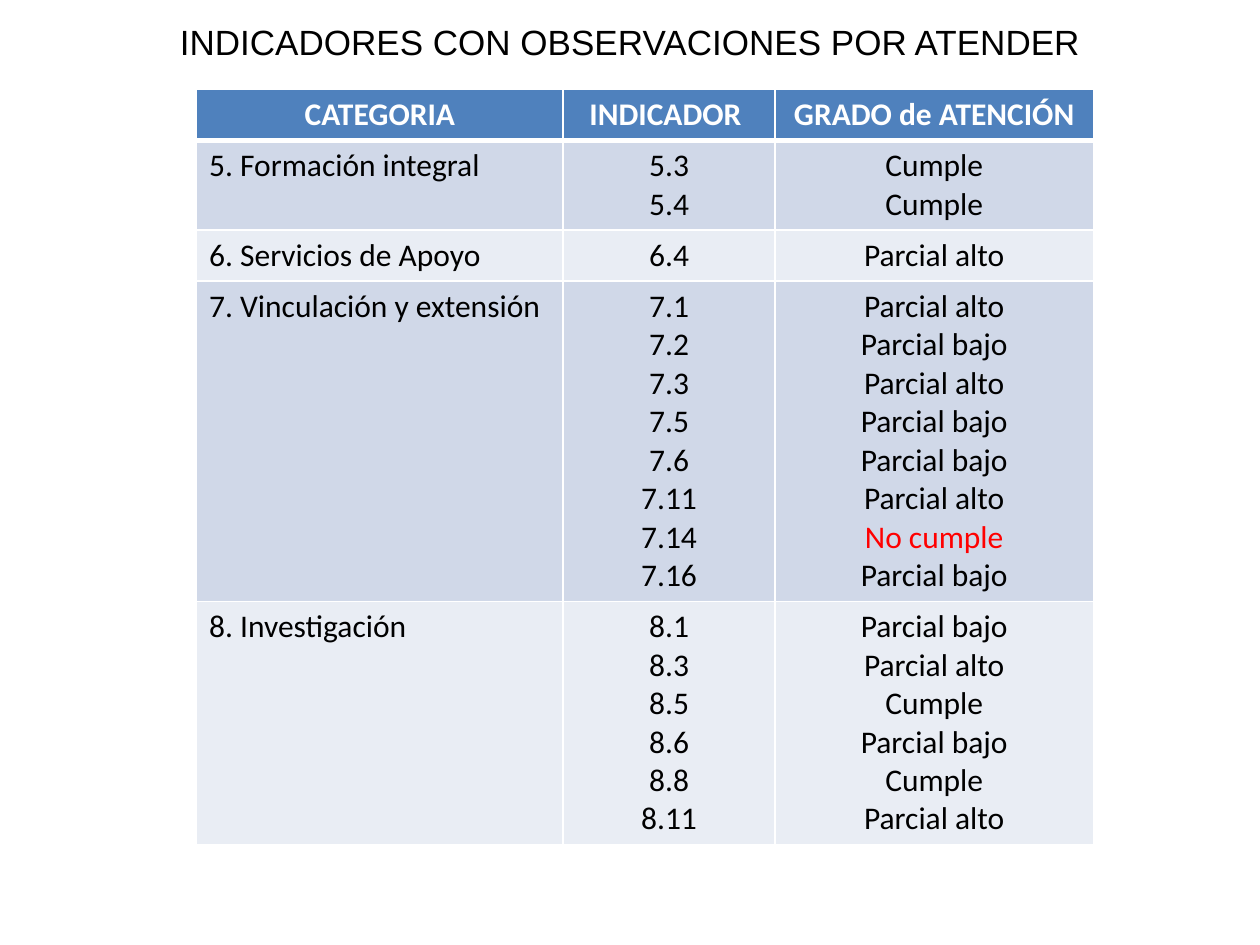
from lxml import etree
from pptx import Presentation
from pptx.dml.color import RGBColor
from pptx.enum.text import MSO_AUTO_SIZE, PP_ALIGN
from pptx.oxml.ns import qn
from pptx.util import Inches, Pt

LEFT, CENTER = PP_ALIGN.LEFT, PP_ALIGN.CENTER
GROW = MSO_AUTO_SIZE.SHAPE_TO_FIT_TEXT

TITLE = "INDICADORES CON OBSERVACIONES POR ATENDER"
HEADS = ("CATEGORIA", "INDICADOR ", "GRADO de ATENCIÓN")
GROUPS = [
    ("5. Formación integral", [("5.3", "Cumple"), ("5.4", "Cumple")]),
    ("6. Servicios de Apoyo", [("6.4", "Parcial alto")]),
    ("7. Vinculación y extensión", [
        ("7.1", "Parcial alto"), ("7.2", "Parcial bajo"),
        ("7.3", "Parcial alto"), ("7.5", "Parcial bajo"),
        ("7.6", "Parcial bajo"), ("7.11", "Parcial alto"),
        ("7.14", "No cumple"), ("7.16", "Parcial bajo")]),
    ("8. Investigación", [
        ("8.1", "Parcial bajo"), ("8.3", "Parcial alto"),
        ("8.5", "Cumple"), ("8.6", "Parcial bajo"),
        ("8.8", "Cumple"), ("8.11", "Parcial alto")]),
]
ALERT = {"No cumple": "FF0000"}
WIDE, HIGH = 10, 7.5
COLS = (2.91, 1.68, 2.53)
X, Y = 1.56, 0.71
LINE, PAD = 0.3, 0.1
HEAD = {"name": "Calibri", "size": Pt(18), "bold": True}
BODY = {**HEAD, "bold": False}
TOP = {"name": "Arial", "size": Pt(20), "bold": False}
BANDS = ("D0D8E8", "E9EDF4")


def color(code):
    return RGBColor.from_string(code)


def write(frame, lines, form, ink, align):
    for i, text in enumerate(lines):
        para = frame.paragraphs[0] if i == 0 else frame.add_paragraph()
        para.alignment = align
        run = para.add_run()
        run.text = text
        for key, value in form.items():
            setattr(run.font, key, value)
        run.font.color.rgb = color(ALERT.get(text, ink))


def edge(cell, base):
    props = cell._tc.get_or_add_tcPr()
    for i, (side, width) in enumerate(zip("LRTB", (1, 1, 1, base))):
        line = etree.Element(qn(f"a:ln{side}"), w=str(Pt(width)))
        fill = etree.SubElement(line, qn("a:solidFill"))
        etree.SubElement(fill, qn("a:srgbClr"), val="FFFFFF")
        props.insert(i, line)


deck = Presentation()
deck.slide_width, deck.slide_height = Inches(WIDE), Inches(HIGH)
slide = deck.slides.add_slide(deck.slide_layouts[6])

rows = [[[head] for head in HEADS]]
for name, pairs in GROUPS:
    marks, grades = zip(*pairs)
    rows.append([[name], marks, grades])
highs = [len(row[1]) * LINE + PAD for row in rows]

grid = slide.shapes.add_table(
    len(rows), len(COLS), Inches(X), Inches(Y),
    Inches(sum(COLS)), Inches(sum(highs))).table
for col, width in zip(grid.columns, COLS):
    col.width = Inches(width)
for r, row in enumerate(rows):
    grid.rows[r].height = Inches(highs[r])
    first = r == 0
    for c, lines in enumerate(row):
        cell = grid.cell(r, c)
        cell.fill.solid()
        cell.fill.fore_color.rgb = color("4F81BD" if first else BANDS[(r - 1) % 2])
        edge(cell, 3 if first else 1)
        write(cell.text_frame, lines, HEAD if first else BODY,
              "FFFFFF" if first else "000000",
              CENTER if first or c else LEFT)

frame = slide.shapes.add_textbox(0, Inches(0.11), Inches(WIDE), Inches(0.44)).text_frame
frame.word_wrap = True
frame.auto_size = GROW
write(frame, [TITLE], TOP, "000000", CENTER)

deck.save("out.pptx")
